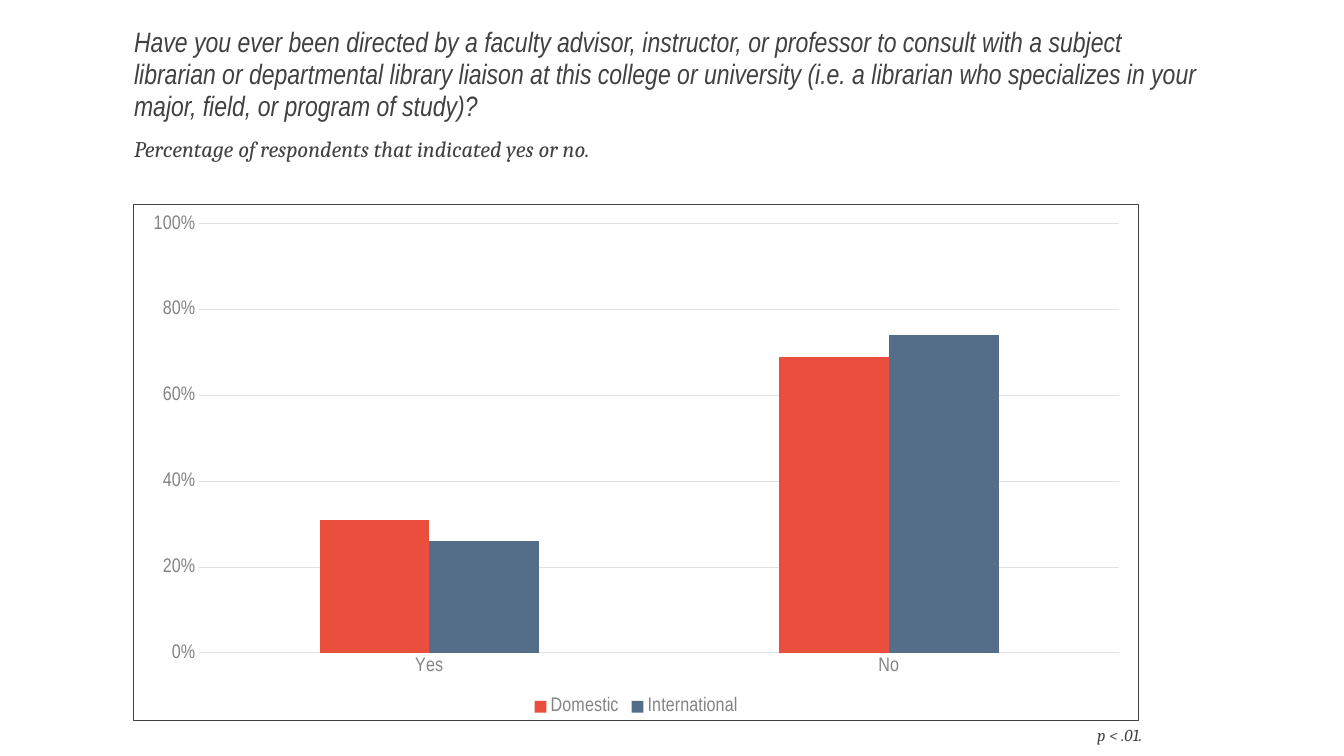
from pptx import Presentation
from pptx.chart.data import CategoryChartData as ChartData
from pptx.dml.color import RGBColor
from pptx.enum.chart import XL_CHART_TYPE as ChartType
from pptx.enum.chart import XL_LEGEND_POSITION as LegendPosition
from pptx.enum.chart import XL_TICK_MARK as TickMark
from pptx.enum.text import MSO_ANCHOR as Anchor
from pptx.enum.text import MSO_AUTO_SIZE as AutoSize
from pptx.enum.text import PP_ALIGN as Align
from pptx.oxml import parse_xml
from pptx.oxml.ns import nsdecls
from pptx.util import Inches, Pt

INK = RGBColor(0x41, 0x40, 0x42)
GRAY = RGBColor(0x83, 0x82, 0x85)
GRID = RGBColor(0xE2, 0xE2, 0xE3)
RED = RGBColor(0xE9, 0x4F, 0x3C)
BLUE = RGBColor(0x54, 0x6D, 0x89)

QUESTION = (
    "Have you ever been directed by a faculty advisor, instructor, or professor "
    "to consult with a subject librarian or departmental library liaison at this "
    "college or university (i.e. a librarian who specializes in your major, "
    "field, or program of study)?"
)


def set_values(target, values):
    for name, value in values.items():
        setattr(target, name, value)


class SurveySlide:
    heading_font = "Arial Narrow"
    body_font = "Cambria"

    def __init__(self, presentation):
        self.slide = presentation.slides.add_slide(presentation.slide_layouts[5])

    def style_font(self, font, name, size, color, italic=False):
        set_values(font, {"name": name, "size": Pt(size), "bold": False, "italic": italic})
        font.color.rgb = color

    def style_line(self, line, color):
        line.color.rgb = color
        line.width = Pt(0.75)

    def fill_text(self, shape, box, text, font, size, anchor=Anchor.TOP,
                  align=Align.LEFT, margins=(0, 0), spacing=1.0):
        left, top, width, height = map(Inches, box)
        set_values(shape, {"left": left, "top": top, "width": width, "height": height})
        frame = shape.text_frame
        set_values(frame, {
            "text": text, "word_wrap": True, "auto_size": AutoSize.NONE,
            "vertical_anchor": anchor, "margin_left": 0, "margin_right": 0,
            "margin_top": Inches(margins[0]), "margin_bottom": Inches(margins[1]),
        })
        paragraph = frame.paragraphs[0]
        set_values(paragraph, {"alignment": align, "line_spacing": spacing})
        self.style_font(paragraph.runs[0].font, font, size, INK, italic=True)

    def add_title(self, box, text):
        self.fill_text(self.slide.shapes.title, box, text, self.heading_font, 20,
                       spacing=0.95)

    def add_text(self, box, text, size, **layout):
        shape = self.slide.shapes.add_textbox(*map(Inches, box))
        self.fill_text(shape, box, text, self.body_font, size, **layout)

    def add_columns(self, box, categories, series):
        data = ChartData(number_format="0%")
        data.categories = categories
        for name, values, _ in series:
            data.add_series(name, values)
        chart = self.slide.shapes.add_chart(
            ChartType.COLUMN_CLUSTERED, *map(Inches, box), data).chart
        self.style_font(chart.font, self.body_font, 10, INK)
        set_values(chart, {"has_title": False, "has_legend": True})
        set_values(chart.legend, {"position": LegendPosition.BOTTOM,
                                  "include_in_layout": False})
        self.style_font(chart.legend.font, self.heading_font, 14, GRAY)

        # Columns
        plot = chart.plots[0]
        set_values(plot, {"gap_width": 219, "overlap": 0, "vary_by_categories": False})
        for column, (_, _, color) in zip(plot.series, series):
            column.format.fill.solid()
            column.format.fill.fore_color.rgb = color

        # Axes
        for axis in (chart.category_axis, chart.value_axis):
            set_values(axis, {"major_tick_mark": TickMark.NONE,
                              "minor_tick_mark": TickMark.NONE})
            self.style_font(axis.tick_labels.font, self.heading_font, 14, GRAY)
        self.style_line(chart.category_axis.format.line, GRID)
        scale = chart.value_axis
        set_values(scale, {"minimum_scale": 0, "maximum_scale": 1, "major_unit": 0.2,
                           "has_major_gridlines": True})
        set_values(scale.tick_labels, {"number_format": "0%",
                                       "number_format_is_linked": False})
        scale.format.line.fill.background()
        self.style_line(scale.major_gridlines.format.line, GRID)

        # Frame around the chart
        border = parse_xml(
            f'<c:spPr {nsdecls("c", "a")}><a:noFill/><a:ln w="{Pt(0.75)}"><a:solidFill>'
            f'<a:srgbClr val="{INK}"/></a:solidFill></a:ln></c:spPr>')
        chart.element.find("{*}chart").addnext(border)


def main():
    presentation = Presentation()
    set_values(presentation, {"slide_width": Inches(13.33), "slide_height": Inches(7.5)})
    survey = SurveySlide(presentation)

    # Question and subtitle
    survey.add_title((1.33, 0.27, 10.66, 0.94), QUESTION)
    survey.add_text((1.33, 1.04, 9.99, 0.68),
                    "Percentage of respondents that indicated yes or no.", 16,
                    anchor=Anchor.MIDDLE, margins=(0.3, 0.11))

    # Answers by group
    survey.add_columns((1.32, 2.02, 9.98, 5.13), ("Yes", "No"), (
        ("Domestic", (0.31, 0.69), RED),
        ("International", (0.26, 0.74), BLUE),
    ))

    # Significance note
    survey.add_text((8.99, 7.14, 2.34, 0.3), "p < .01.", 12,
                    align=Align.RIGHT, margins=(0.05, 0.05))
    presentation.save("out.pptx")


if __name__ == "__main__":
    main()
